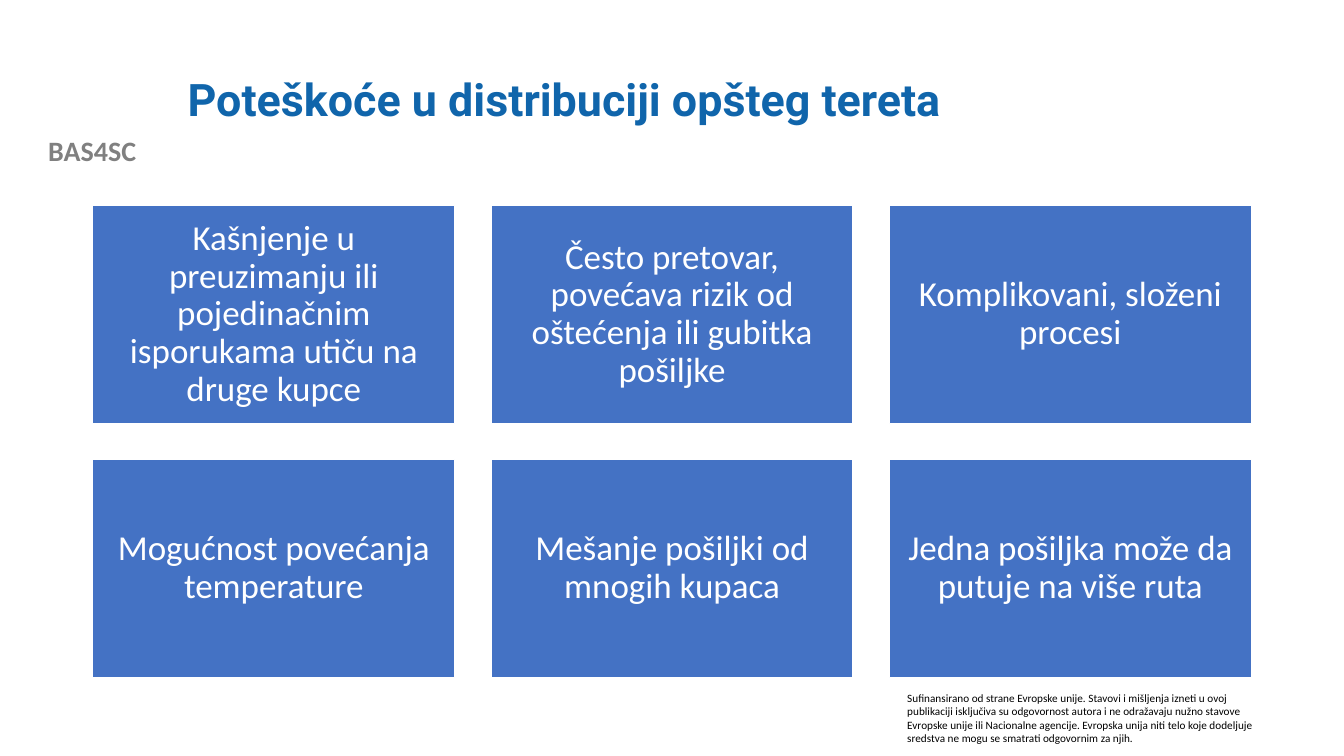
from pptx import Presentation
from pptx.dml.color import RGBColor
from pptx.enum import shapes, text
from pptx.util import Inches, Pt

TITLE = "Poteškoće u distribuciji opšteg tereta"
TAG = "BAS4SC"
NOTE = ("Sufinansirano od strane Evropske unije. Stavovi i mišljenja izneti u ovoj "
        "publikaciji isključiva su odgovornost autora i ne odražavaju nužno stavove "
        "Evropske unije ili Nacionalne agencije. Evropska unija niti telo koje dodeljuje "
        "sredstva ne mogu se smatrati odgovornim za njih.")
CARDS = [
    "Kašnjenje u preuzimanju ili pojedinačnim isporukama utiču na druge kupce",
    "Često pretovar, povećava rizik od oštećenja ili gubitka pošiljke",
    "Komplikovani, složeni procesi",
    "Mogućnost povećanja temperature",
    "Mešanje pošiljki od mnogih kupaca",
    "Jedna pošiljka može da putuje na više ruta",
]
COLS, LEFT, TOP = 3, 0.92, 2.04
WIDTH, HEIGHT, GAP = 3.59, 2.16, 0.36

ALIGN, ANCHOR = text.PP_ALIGN, text.MSO_ANCHOR
HEAD = {"name": "Roboto", "size": Pt(32), "bold": True}
LABEL = {"name": "Calibri", "size": Pt(20), "bold": True}
SMALL = {"name": "Calibri", "size": Pt(8)}
BODY = {"name": "Calibri", "size": Pt(25)}


def color(code):
    return RGBColor.from_string(code)


def write(shape, words, font, code, align=ALIGN.LEFT, anchor=ANCHOR.TOP, space=1.0):
    frame = shape.text_frame
    frame.text = words
    for key, value in {"word_wrap": True, "auto_size": text.MSO_AUTO_SIZE.NONE,
                       "vertical_anchor": anchor}.items():
        setattr(frame, key, value)
    para = frame.paragraphs[0]
    para.alignment = align
    para.line_spacing = space
    run = para.runs[0]
    for key, value in font.items():
        setattr(run.font, key, value)
    run.font.color.rgb = color(code)


def place(*sides):
    return [Inches(side) for side in sides]


deck = Presentation()
deck.slide_width, deck.slide_height = place(13.33, 7.5)
slide = deck.slides.add_slide(deck.slide_layouts[5])

tag = slide.shapes.add_textbox(*place(0, 1.28, 1.83, 0.44))
write(tag, TAG, LABEL, "808080", ALIGN.CENTER)
note = slide.shapes.add_textbox(*place(8.9, 6.81, 3.7, 0.64))
write(note, NOTE, SMALL, "000000")

title = slide.shapes.title
title.left, title.top, title.width, title.height = place(1.76, 0.4, 10.66, 1.22)
write(title, TITLE, HEAD, "1065AB", anchor=ANCHOR.MIDDLE, space=0.9)

for index, words in enumerate(CARDS):
    row, col = divmod(index, COLS)
    card = slide.shapes.add_shape(
        shapes.MSO_SHAPE.RECTANGLE,
        *place(LEFT + col * (WIDTH + GAP), TOP + row * (HEIGHT + GAP), WIDTH, HEIGHT))
    card.shadow.inherit = False
    card.fill.solid()
    card.fill.fore_color.rgb = color("4472C4")
    card.line.color.rgb = color("FFFFFF")
    card.line.width = Pt(1)
    for side in ("left", "top", "right", "bottom"):
        setattr(card.text_frame, f"margin_{side}", Inches(0.1))
    write(card, words, BODY, "FFFFFF", ALIGN.CENTER, ANCHOR.MIDDLE, 0.9)

deck.save("out.pptx")
